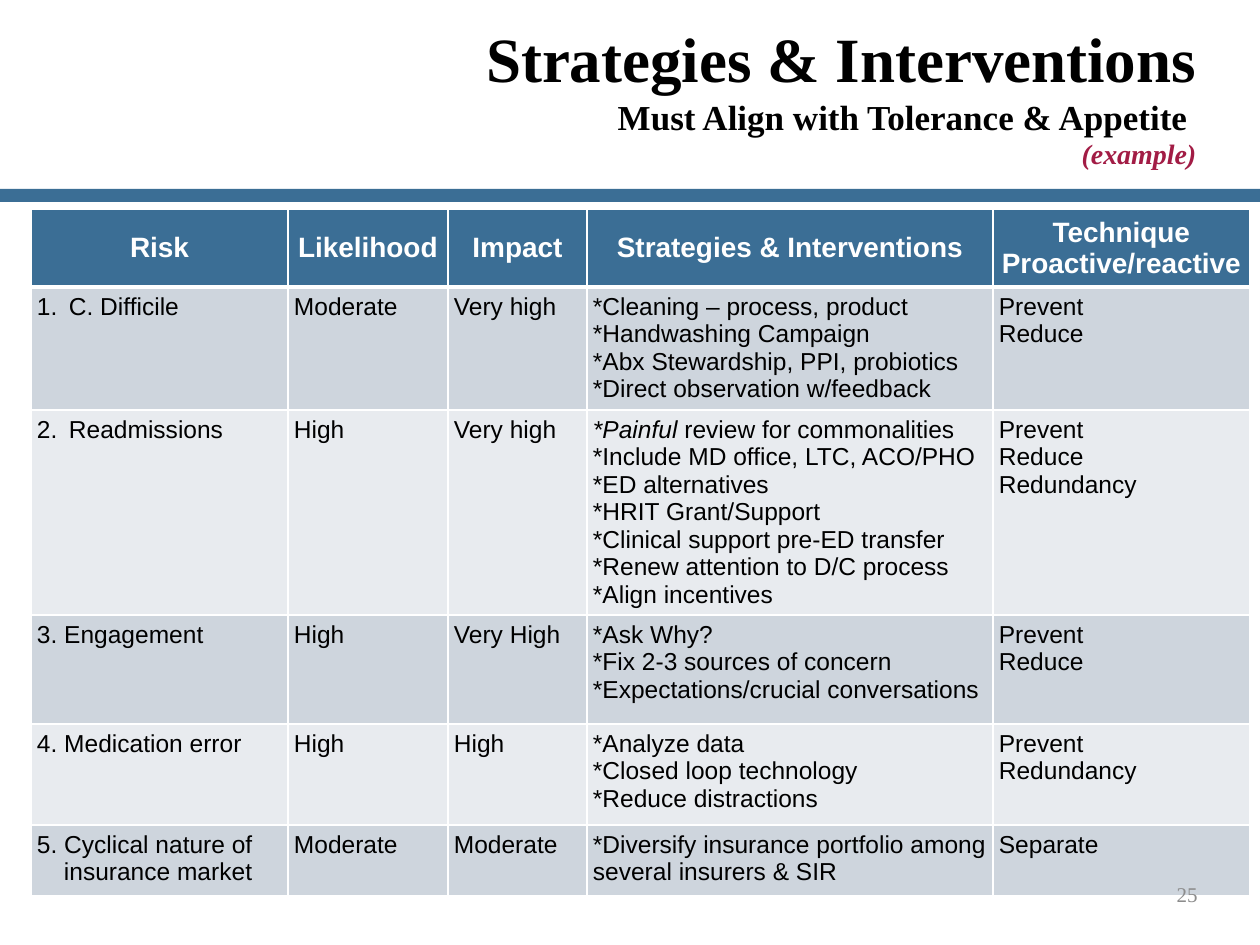
"""Build the Strategies & Interventions risk table slide."""
from lxml import etree
from pptx import Presentation
from pptx.dml.color import RGBColor
from pptx.enum.shapes import MSO_SHAPE
from pptx.enum.text import MSO_ANCHOR, MSO_AUTO_SIZE, PP_ALIGN
from pptx.oxml.ns import qn
from pptx.util import Pt

PX = 914400 // 126
RECT = MSO_SHAPE.RECTANGLE
TOP, MIDDLE = MSO_ANCHOR.TOP, MSO_ANCHOR.MIDDLE
LEFT, CENTER, RIGHT = PP_ALIGN.LEFT, PP_ALIGN.CENTER, PP_ALIGN.RIGHT
NO_FIT = MSO_AUTO_SIZE.NONE
SERIF, SANS = "Times New Roman", "Arial"
BLACK = RGBColor(0x00, 0x00, 0x00)
WHITE = RGBColor(0xFF, 0xFF, 0xFF)
BLUE = RGBColor(0x3B, 0x6E, 0x95)
CRIMSON = RGBColor(0xA2, 0x1C, 0x45)
GRAY = RGBColor(0x8C, 0x8C, 0x8C)
BANDS = RGBColor(0xCE, 0xD5, 0xDD), RGBColor(0xE8, 0xEB, 0xEF)

TITLE = [
    ("Strategies & Interventions", dict(size=36)),
    ("Must Align with Tolerance & Appetite ", dict(size=20)),
    ("(example)", dict(size=16, color=CRIMSON, italic=True)),
]
HEADER = [["Risk"], ["Likelihood"], ["Impact"], ["Strategies & Interventions"],
          ["Technique", "Proactive/reactive"]]
RISKS = [
    [["C. Difficile"], ["Moderate"], ["Very high"],
     ["*Cleaning – process, product", "*Handwashing Campaign",
      "*Abx Stewardship, PPI, probiotics", "*Direct observation w/feedback"],
     ["Prevent", "Reduce"]],
    [["Readmissions"], ["High"], ["Very high"],
     [("*Painful", " review for commonalities"),
      "*Include MD office, LTC, ACO/PHO", "*ED alternatives",
      "*HRIT Grant/Support", "*Clinical support pre-ED transfer",
      "*Renew attention to D/C process", "*Align incentives"],
     ["Prevent", "Reduce", "Redundancy"]],
    [["3. Engagement"], ["High"], ["Very High"],
     ["*Ask Why?", "*Fix 2-3 sources of concern",
      "*Expectations/crucial conversations"],
     ["Prevent", "Reduce"]],
    [["4. Medication error"], ["High"], ["High"],
     ["*Analyze data", "*Closed loop technology", "*Reduce distractions"],
     ["Prevent", "Redundancy"]],
    [["5. Cyclical nature of", "insurance market"], ["Moderate"], ["Moderate"],
     ["*Diversify insurance portfolio among several insurers & SIR"],
     ["Separate"]],
]
AUTO_NUMBERED = 2
COLS = [257, 160, 139, 406, 257]
ROWS = [78, 123, 205, 109, 101, 71]
TABLE_LEFT, TABLE_TOP, INSET = 31, 209, 6
NUMBER_INDENT, WRAP_INDENT = 32, 27


def px(*values):
    return [v * PX for v in values]


def add_run(p, text, size=14, color=BLACK, font=SANS, bold=False, italic=False):
    r = p.add_run()
    r.text = text
    f = r.font
    f.size, f.name, f.bold, f.italic = Pt(size), font, bold, italic
    f.color.rgb = color


def indent(p, left, first=0, number=None):
    pPr = p._p.get_or_add_pPr()
    pPr.set("marL", str(left * PX))
    pPr.set("indent", str(first * PX))
    if number:
        etree.SubElement(pPr, qn("a:buFont"), typeface="+mj-lt")
        etree.SubElement(pPr, qn("a:buAutoNum"), type="arabicPeriod",
                         startAt=str(number))


def set_borders(cell, top=1, bottom=1):
    tcPr = cell._tc.get_or_add_tcPr()
    sides = (("L", 1), ("R", 1), ("T", top), ("B", bottom))
    for i, (side, width) in enumerate(sides):
        ln = etree.Element(qn(f"a:ln{side}"), w=str(Pt(width)))
        fill = etree.SubElement(ln, qn("a:solidFill"))
        etree.SubElement(fill, qn("a:srgbClr"), val=str(WHITE))
        tcPr.insert(i, ln)


def fill_cell(cell, lines, fill, anchor=TOP, align=LEFT, number=None, **fmt):
    cell.fill.solid()
    cell.fill.fore_color.rgb = fill
    cell.vertical_anchor = anchor
    cell.margin_left = cell.margin_right = INSET * PX
    cell.margin_top = cell.margin_bottom = INSET * PX
    tf = cell.text_frame
    for i, line in enumerate(lines):
        p = tf.add_paragraph() if i else tf.paragraphs[0]
        if number:
            indent(p, NUMBER_INDENT, -NUMBER_INDENT, number)
        elif line == "insurance market":
            indent(p, WRAP_INDENT)
        p.alignment = align
        if isinstance(line, tuple):
            stressed, line = line
            add_run(p, stressed, italic=True, **fmt)
        add_run(p, line, **fmt)


def add_title(s):
    sp = s.shapes.title
    sp.left, sp.top, sp.width, sp.height = px(302, 32, 907, 126)
    tf = sp.text_frame
    tf.auto_size, tf.word_wrap, tf.vertical_anchor = NO_FIT, True, MIDDLE
    p = tf.paragraphs[0]
    p.alignment = RIGHT
    for i, (text, fmt) in enumerate(TITLE):
        if i:
            p.add_line_break()
        add_run(p, text, font=SERIF, bold=True, **fmt)


def add_band(s):
    sp = s.shapes.add_shape(RECT, *px(0, 189, 1260, 13))
    sp.shadow.inherit = False
    sp.fill.solid()
    sp.fill.fore_color.rgb = BLUE
    sp.line.fill.background()


def add_risk_table(s):
    frame = s.shapes.add_table(len(ROWS), len(COLS), *px(
        TABLE_LEFT, TABLE_TOP, sum(COLS), sum(ROWS)))
    table = frame.table
    for column, width in zip(table.columns, COLS):
        column.width = width * PX
    for row, height in zip(table.rows, ROWS):
        row.height = height * PX
    for c, lines in enumerate(HEADER):
        cell = table.cell(0, c)
        fill_cell(cell, lines, BLUE, MIDDLE, CENTER,
                  size=16, color=WHITE, bold=True)
        set_borders(cell, bottom=3)
    for r, risk in enumerate(RISKS, 1):
        for c, lines in enumerate(risk):
            cell = table.cell(r, c)
            number = r if c == 0 and r <= AUTO_NUMBERED else None
            fill_cell(cell, lines, BANDS[(r - 1) % 2], number=number)
            set_borders(cell, top=3 if r == 1 else 1)


def add_page_number(s, text):
    tf = s.shapes.add_textbox(*px(1084, 869, 126, 50)).text_frame
    tf.word_wrap, tf.vertical_anchor = True, MIDDLE
    p = tf.paragraphs[0]
    p.alignment = RIGHT
    add_run(p, text, size=12, color=GRAY, font=SERIF)


def main():
    prs = Presentation()
    prs.slide_width, prs.slide_height = px(1260, 945)
    s = prs.slides.add_slide(prs.slide_layouts[5])
    add_band(s)
    add_title(s)
    add_risk_table(s)
    add_page_number(s, "25")
    prs.save("out.pptx")


if __name__ == "__main__":
    main()
